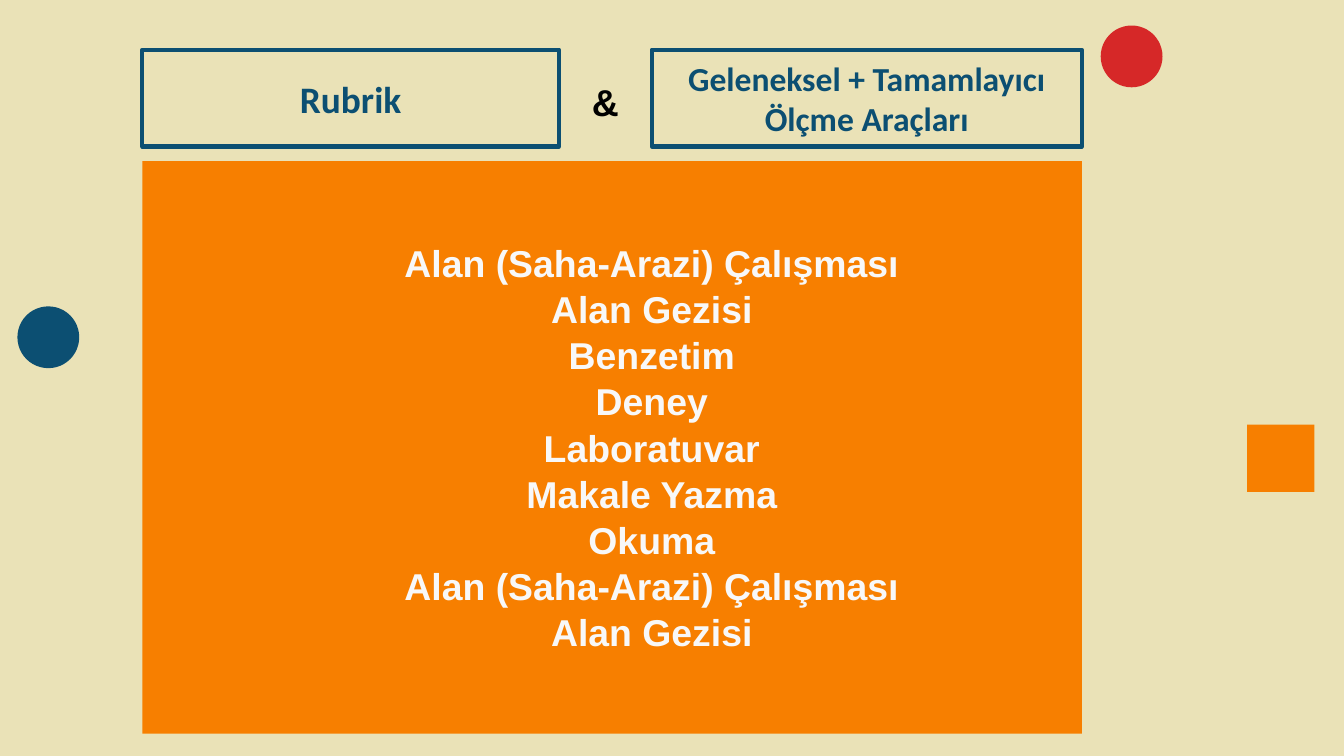
import pptx
from pptx.dml.color import RGBColor
from pptx.enum.shapes import MSO_SHAPE
from pptx.enum.text import MSO_ANCHOR, MSO_AUTO_SIZE, PP_ALIGN
from pptx.util import Inches, Pt

COLORS = {
    "sand": "EAE2B7",
    "navy": "0C4F72",
    "orange": "F77F00",
    "red": "D62828",
    "white": "F8F8F8",
    "black": "000000",
}
METHODS = [
    "Alan (Saha-Arazi) Çalışması",
    "Alan Gezisi",
    "Benzetim",
    "Deney",
    "Laboratuvar",
    "Makale Yazma",
    "Okuma",
    "Alan (Saha-Arazi) Çalışması",
    "Alan Gezisi",
]


def rgb(name):
    return RGBColor.from_string(COLORS[name])


def write(tf, text, size, font, color):
    p = tf.paragraphs[0]
    p.alignment = PP_ALIGN.CENTER
    r = p.add_run()
    r.text = text
    r.font.size = Pt(size)
    r.font.name = font
    r.font.bold = True
    r.font.color.rgb = rgb(color)


def set_margins(target, left, top, right, bottom):
    target.margin_left = Inches(left)
    target.margin_top = Inches(top)
    target.margin_right = Inches(right)
    target.margin_bottom = Inches(bottom)


def add_block(s, kind, x, y, w, h, color):
    """Add a filled shape without an outline."""
    sp = s.shapes.add_shape(kind, Inches(x), Inches(y), Inches(w), Inches(h))
    sp.shadow.inherit = False
    sp.fill.solid()
    sp.fill.fore_color.rgb = rgb(color)
    sp.line.fill.background()


def add_heading_box(s, x, y, w, h, text, size):
    sp = s.shapes.add_shape(MSO_SHAPE.RECTANGLE, Inches(x), Inches(y), Inches(w), Inches(h))
    sp.shadow.inherit = False
    sp.fill.background()
    sp.line.color.rgb = rgb("navy")
    sp.line.width = Pt(2.25)
    tf = sp.text_frame
    tf.word_wrap = True
    tf.vertical_anchor = MSO_ANCHOR.MIDDLE
    set_margins(tf, 0.1, 0.1, 0.1, 0.1)
    write(tf, text, size, "Calibri", "navy")


def add_decorations(s):
    add_block(s, MSO_SHAPE.RECTANGLE, 9.28, 3.16, 0.5, 0.5, "orange")
    add_block(s, MSO_SHAPE.OVAL, 0.13, 2.28, 0.46, 0.46, "navy")
    add_block(s, MSO_SHAPE.OVAL, 8.19, 0.19, 0.46, 0.46, "red")


def add_header(s, x, y, w, h):
    """Two outlined headings joined by an ampersand."""
    left_w, right_w = 3.1, 3.2
    add_heading_box(s, x, y, left_w, h, "Rubrik", 20)
    add_heading_box(s, x + w - right_w, y, right_w, h,
                    "Geleneksel + Tamamlayıcı Ölçme Araçları", 18)
    sp = s.shapes.add_textbox(Inches(x + 3.19), Inches(y + 0.17), Inches(0.51), Inches(0.44))
    tf = sp.text_frame
    tf.word_wrap = True
    tf.auto_size = MSO_AUTO_SIZE.SHAPE_TO_FIT_TEXT
    write(tf, "&", 20, "Arial", "black")


def add_methods_panel(s, x, y, w, h):
    """Orange panel holding a one-column table of methods."""
    add_block(s, MSO_SHAPE.RECTANGLE, x, y, w, h, "orange")
    frame = s.shapes.add_table(len(METHODS), 1, Inches(x + 1.76), Inches(y + 0.59),
                               Inches(4.06), Inches(3.09))
    table = frame.table
    table.first_row = False
    table.horz_banding = False
    for i, method in enumerate(METHODS):
        table.rows[i].height = Inches(0.21)
        cell = table.cell(i, 0)
        cell.fill.background()
        cell.vertical_anchor = MSO_ANCHOR.MIDDLE
        set_margins(cell, 0.01, 0.01, 0.01, 0)
        write(cell.text_frame, method, 20, "Arial", "white")
    frame.height = Inches(3.09)
    # The plain style has neither borders nor banding.
    style = table._tbl.tblPr.find(pptx.oxml.ns.qn("a:tableStyleId"))
    style.text = "{2D5ABB26-0587-4C30-8999-92F81FD0307C}"


def main():
    prs = pptx.Presentation()
    prs.slide_width = Inches(10)
    prs.slide_height = prs.slide_width * 9 // 16
    s = prs.slides.add_slide(prs.slide_layouts[6])
    s.background.fill.solid()
    s.background.fill.fore_color.rgb = rgb("sand")
    add_decorations(s)
    add_header(s, 1.06, 0.37, 6.99, 0.72)
    add_methods_panel(s, 1.06, 1.2, 6.99, 4.26)
    prs.save("out.pptx")


if __name__ == "__main__":
    main()
